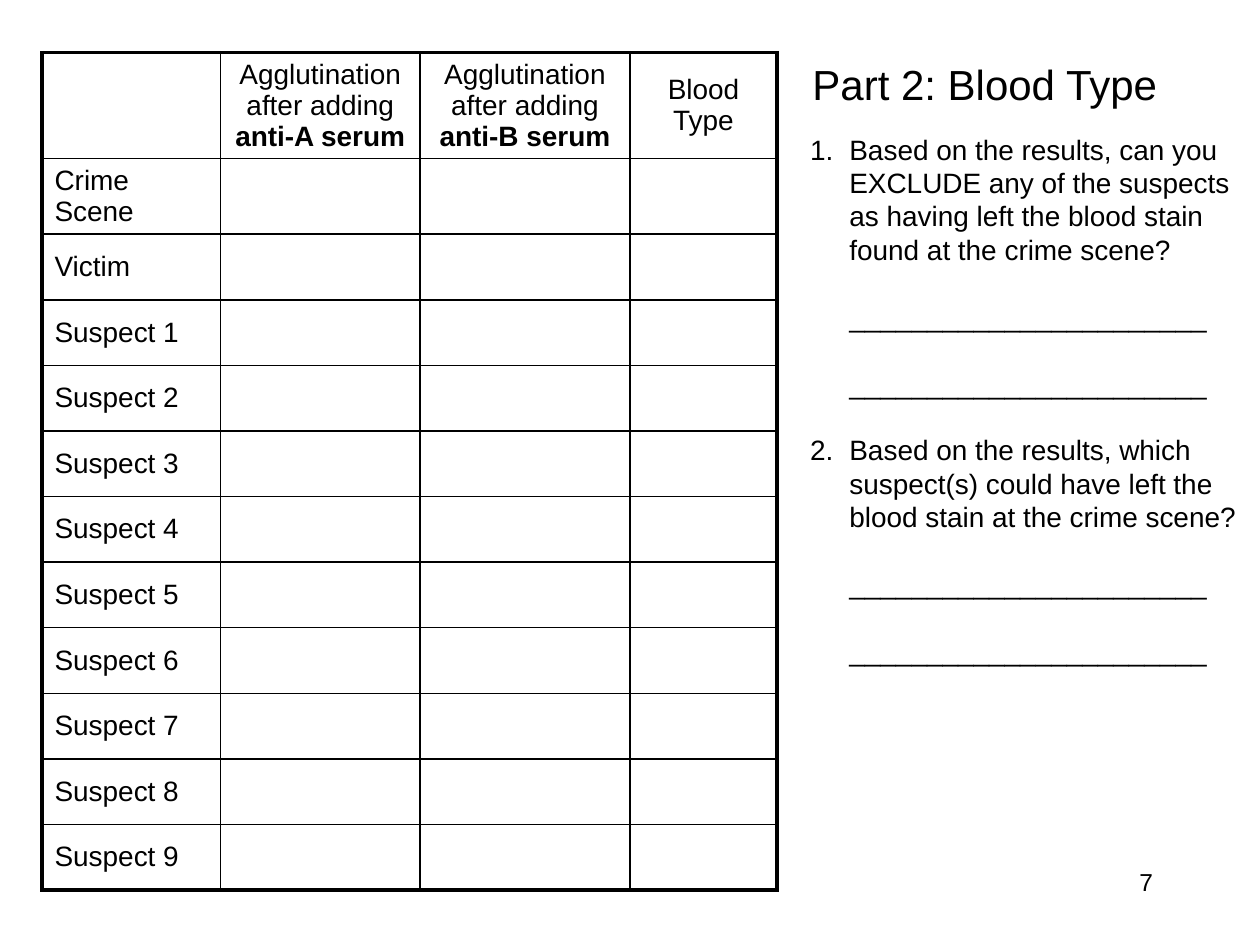
"""Build the blood type worksheet slide with a results table and two questions."""
import pptx
import pptx.util
import pptx.dml.color
import pptx.enum.text
import pptx.oxml.ns
import lxml.etree

Pt = pptx.util.Pt
ALIGN = pptx.enum.text.PP_ALIGN
ANCHOR = pptx.enum.text.MSO_ANCHOR
COLORS = {"ink": "000000", "paper": "FFFFFF"}


def add_run(p, text, size, bold=False):
    r = p.add_run()
    r.text = text
    r.font.name = "Arial"
    r.font.size = Pt(size)
    r.font.bold = bold
    r.font.color.rgb = pptx.dml.color.RGBColor.from_string(COLORS["ink"])


def sub(parent, tag, **attrs):
    el = lxml.etree.SubElement(parent, pptx.oxml.ns.qn(tag))
    for name, value in attrs.items():
        el.set(name, str(value))
    return el


prs = pptx.Presentation()
prs.slide_width, prs.slide_height = Pt(720), Pt(540)
s = prs.slides.add_slide(prs.slide_layouts[6])
s.background.fill.solid()
s.background.fill.fore_color.rgb = pptx.dml.color.RGBColor.from_string(COLORS["paper"])

number = s.shapes.add_textbox(Pt(516), Pt(492), Pt(150), Pt(36))
number.text_frame.word_wrap = True
p = number.text_frame.paragraphs[0]
p.alignment = ALIGN.RIGHT
add_run(p, "7", 14)

headers = [
    [],
    [("Agglutination after adding ", False), ("anti-A serum", True)],
    [("Agglutination after adding ", False), ("anti-B serum", True)],
    [("Blood Type", False)],
]
samples = ["Crime Scene", "Victim"] + [f"Suspect {n}" for n in range(1, 10)]
rows = [headers] + [[[(name, False)], [], [], []] for name in samples]
widths = [102, 114, 120, 84]
heights = [60, 43.2] + [37.5] * 10

tbl = s.shapes.add_table(
    len(rows), len(widths), Pt(24), Pt(30), Pt(sum(widths)), Pt(sum(heights))
).table
tbl.first_row = False
tbl.horz_banding = False
for col, width in zip(tbl.columns, widths):
    col.width = Pt(width)
for row, height in zip(tbl.rows, heights):
    row.height = Pt(height)

for i, row in enumerate(rows):
    for j, runs in enumerate(row):
        cell = tbl.cell(i, j)
        cell.vertical_anchor = ANCHOR.MIDDLE
        p = cell.text_frame.paragraphs[0]
        p.line_spacing = Pt(17.8)
        p.alignment = ALIGN.CENTER if i == 0 else ALIGN.LEFT
        for text, bold in runs:
            add_run(p, text, 16, bold)
        tcPr = cell._tc.get_or_add_tcPr()
        outer = {
            "a:lnL": j == 0,
            "a:lnR": j == len(widths) - 1,
            "a:lnT": i == 0,
            "a:lnB": i == len(rows) - 1,
        }
        for tag, is_outer in outer.items():
            ln = sub(tcPr, tag, w=Pt(2.25 if is_outer else 1))
            sub(sub(ln, "a:solidFill"), "a:srgbClr", val=COLORS["ink"])
        cell.fill.background()

title = s.shapes.add_textbox(Pt(457.2), Pt(30), Pt(213), Pt(36))
title.text_frame.word_wrap = False
title.text_frame.auto_size = pptx.enum.text.MSO_AUTO_SIZE.SHAPE_TO_FIT_TEXT
add_run(title.text_frame.paragraphs[0], "Part 2: Blood Type", 24)

questions = [
    "Based on the results, can you EXCLUDE any of the suspects as having left "
    "the blood stain found at the crime scene?",
    "Based on the results, which suspect(s) could have left the blood stain "
    "at the crime scene?",
]
sp = s.shapes.add_textbox(Pt(455.8), Pt(72), Pt(274), Pt(334.8))
tf = sp.text_frame
tf.word_wrap = True
for n, question in enumerate(questions, 1):
    for k, text in enumerate([question] + ["_" * 23] * 2):
        first = n == 1 and k == 0
        p = tf.paragraphs[0] if first else tf.add_paragraph()
        p.line_spacing = Pt(19.1)
        p.space_before = Pt(0 if first else 19.1)
        pPr = p._p.get_or_add_pPr()
        pPr.set("marL", str(Pt(22.5)))
        if k == 0:
            pPr.set("indent", str(Pt(-22.5)))
            sub(pPr, "a:buFont", typeface="Arial")
            sub(pPr, "a:buAutoNum", type="arabicPeriod", startAt=n)
        add_run(p, text, 16)

prs.save("out.pptx")
